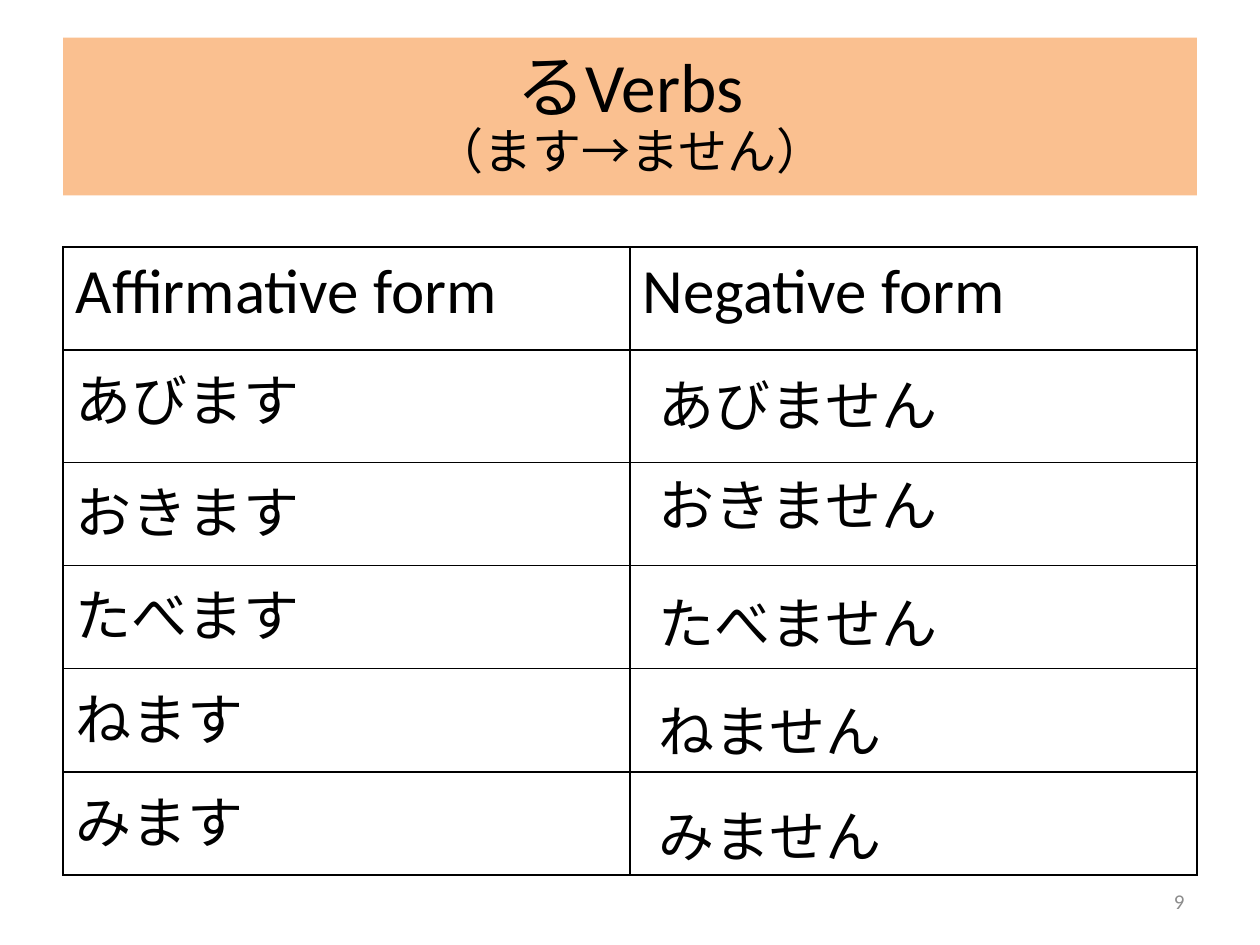
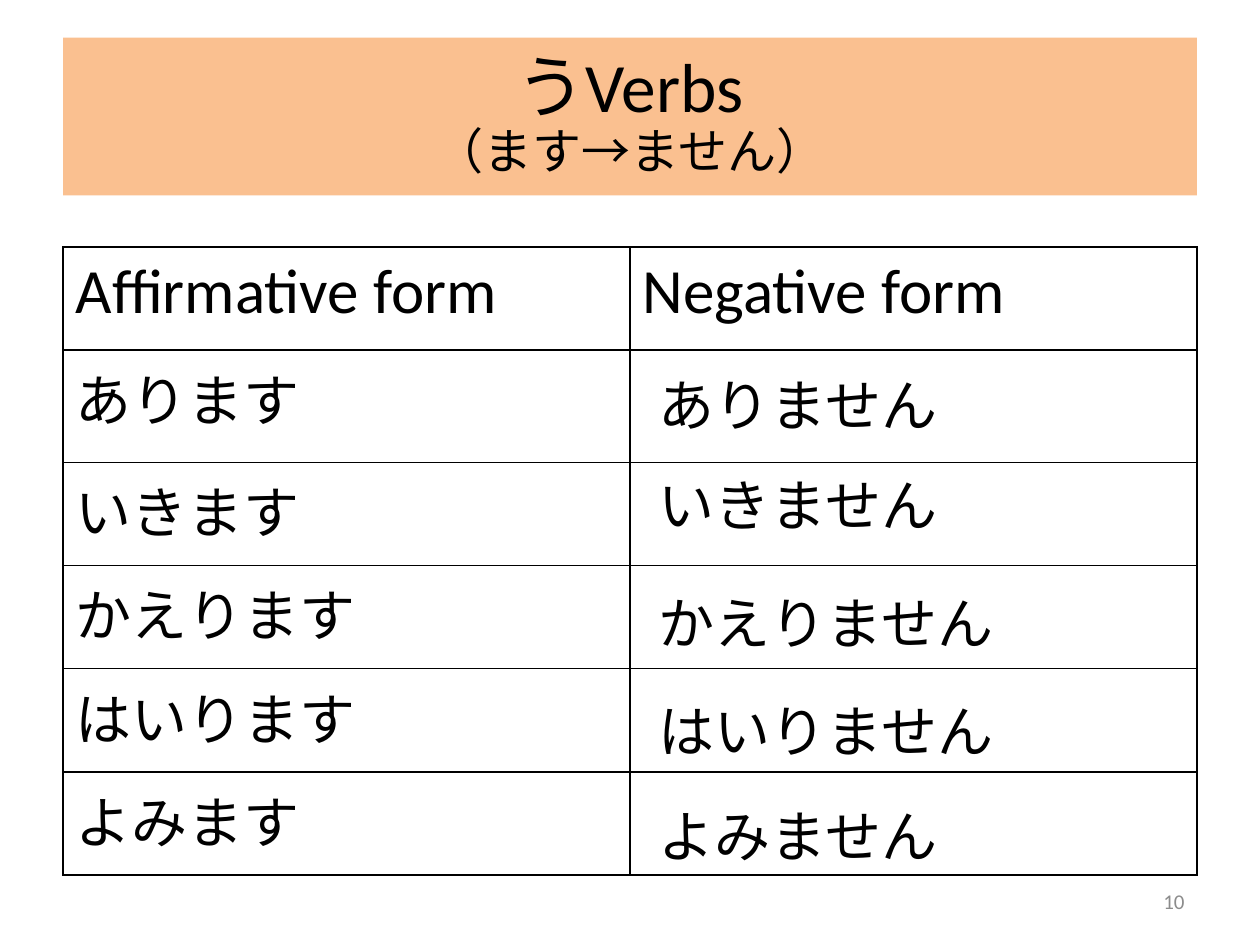
from dataclasses import dataclass

from lxml.etree import SubElement
from pptx import Presentation
from pptx.dml.color import RGBColor
from pptx.enum.text import MSO_ANCHOR as Anchor, MSO_AUTO_SIZE as AutoSize, PP_ALIGN as Align
from pptx.oxml.ns import qn
from pptx.slide import Slide
from pptx.table import _Cell as Cell
from pptx.text.text import _Run as Run
from pptx.util import Cm, Length, Pt


@dataclass(frozen=True)
class Theme:
    band: RGBColor = RGBColor(0xFA, 0xC0, 0x90)
    ink: RGBColor = RGBColor(0, 0, 0)
    muted: RGBColor = RGBColor(0x8C, 0x8C, 0x8C)
    latin: str = "Calibri"
    japanese: str = "Noto Sans CJK JP"
    title: Length = Pt(39.6)
    subtitle: Length = Pt(28)
    header: Length = Pt(36)
    verb: Length = Pt(32)
    number: Length = Pt(12)
    border: Length = Pt(1)


@dataclass(frozen=True)
class Box:
    left: Length
    top: Length
    width: Length
    height: Length


@dataclass(frozen=True)
class VerbGroup:
    number: int
    ending: str
    stems: tuple[str, ...]


THEME = Theme()
AFFIRMATIVE, NEGATIVE = "ます", "ません"
HEADERS = ("Affirmative form", "Negative form")
GROUPS = (
    VerbGroup(9, "る", ("あび", "おき", "たべ", "ね", "み")),
    VerbGroup(10, "う", ("あり", "いき", "かえり", "はいり", "よみ")),
)

TITLE_BOX = Box(Cm(1.27), Cm(0.76), Cm(22.86), Cm(3.18))
TABLE_BOX = Box(Cm(1.27), Cm(4.98), Cm(22.86), Cm(12.66))
NUMBER_BOX = Box(Cm(18.21), Cm(17.65), Cm(5.92), Cm(1.02))
ROW_HEIGHT, FIRST_VERB_HEIGHT = Cm(2.08), Cm(2.26)
ANSWER_LEFT, ANSWER_WIDTH, ANSWER_HEIGHT = Cm(13.03), Cm(7.75), Cm(1.63)
ANSWER_TOPS = (Cm(7.34), Cm(9.37), Cm(11.73), Cm(13.92), Cm(16.03))


def format_run(run: Run, size: Length, font: str = THEME.latin,
               color: RGBColor = THEME.ink) -> None:
    """Style a run, with the Japanese font for its East Asian characters."""
    run.font.size = size
    run.font.name = font
    run.font.color.rgb = color
    SubElement(run.font._element, qn("a:ea"), typeface=THEME.japanese)


def add_title(slide: Slide, ending: str) -> None:
    title = slide.shapes.title
    title.left, title.top = TITLE_BOX.left, TITLE_BOX.top
    title.width, title.height = TITLE_BOX.width, TITLE_BOX.height
    title.fill.solid()
    title.fill.fore_color.rgb = THEME.band
    frame = title.text_frame
    frame.text = f"{ending}Verbs\v（{AFFIRMATIVE}→{NEGATIVE}）"
    frame.auto_size = AutoSize.NONE
    frame.vertical_anchor = Anchor.MIDDLE
    paragraph = frame.paragraphs[0]
    paragraph.alignment = Align.CENTER
    paragraph.line_spacing = 0.9
    for run, size in zip(paragraph.runs, (THEME.title, THEME.subtitle)):
        format_run(run, size)


def add_text(slide: Slide, box: Box, text: str, size: Length, font: str,
             color: RGBColor = THEME.ink, align: Align = Align.LEFT,
             anchor: Anchor = Anchor.TOP) -> None:
    shape = slide.shapes.add_textbox(box.left, box.top, box.width, box.height)
    frame = shape.text_frame
    frame.text = text
    frame.word_wrap = True
    frame.vertical_anchor = anchor
    paragraph = frame.paragraphs[0]
    paragraph.alignment = align
    format_run(paragraph.runs[0], size, font, color)


def outline_cell(cell: Cell) -> None:
    """Give a cell four solid borders and no fill."""
    properties = cell._tc.get_or_add_tcPr()
    for side in ("a:lnL", "a:lnR", "a:lnT", "a:lnB"):
        line = SubElement(properties, qn(side), w=str(THEME.border))
        fill = SubElement(line, qn("a:solidFill"))
        SubElement(fill, qn("a:srgbClr"), val=str(THEME.ink))
    cell.fill.background()


def add_verb_table(slide: Slide, stems: tuple[str, ...]) -> None:
    box = TABLE_BOX
    table = slide.shapes.add_table(len(stems) + 1, len(HEADERS), box.left, box.top,
                                   box.width, box.height).table
    table.first_row = table.horz_banding = False
    for index, row in enumerate(table.rows):
        row.height = FIRST_VERB_HEIGHT if index == 1 else ROW_HEIGHT
    for cell in table.iter_cells():
        outline_cell(cell)
    for column, header in enumerate(HEADERS):
        fill_cell(table.cell(0, column), header, THEME.header, THEME.latin)
    for row, stem in enumerate(stems, start=1):
        fill_cell(table.cell(row, 0), stem + AFFIRMATIVE, THEME.verb, THEME.japanese)


def fill_cell(cell: Cell, text: str, size: Length, font: str) -> None:
    cell.text_frame.text = text
    format_run(cell.text_frame.paragraphs[0].runs[0], size, font)


def add_verb_slide(presentation: Presentation, group: VerbGroup) -> None:
    slide = presentation.slides.add_slide(presentation.slide_layouts.get_by_name("Title Only"))
    add_title(slide, group.ending)
    add_text(slide, NUMBER_BOX, str(group.number), THEME.number, THEME.latin,
             THEME.muted, Align.RIGHT, Anchor.MIDDLE)
    add_verb_table(slide, group.stems)
    for stem, top in zip(group.stems, ANSWER_TOPS):
        box = Box(ANSWER_LEFT, top, ANSWER_WIDTH, ANSWER_HEIGHT)
        add_text(slide, box, stem + NEGATIVE, THEME.verb, THEME.japanese)


def main() -> None:
    presentation = Presentation()
    presentation.slide_width, presentation.slide_height = Cm(25.4), Cm(19.05)
    for group in GROUPS:
        add_verb_slide(presentation, group)
    presentation.save("out.pptx")


if __name__ == "__main__":
    main()
